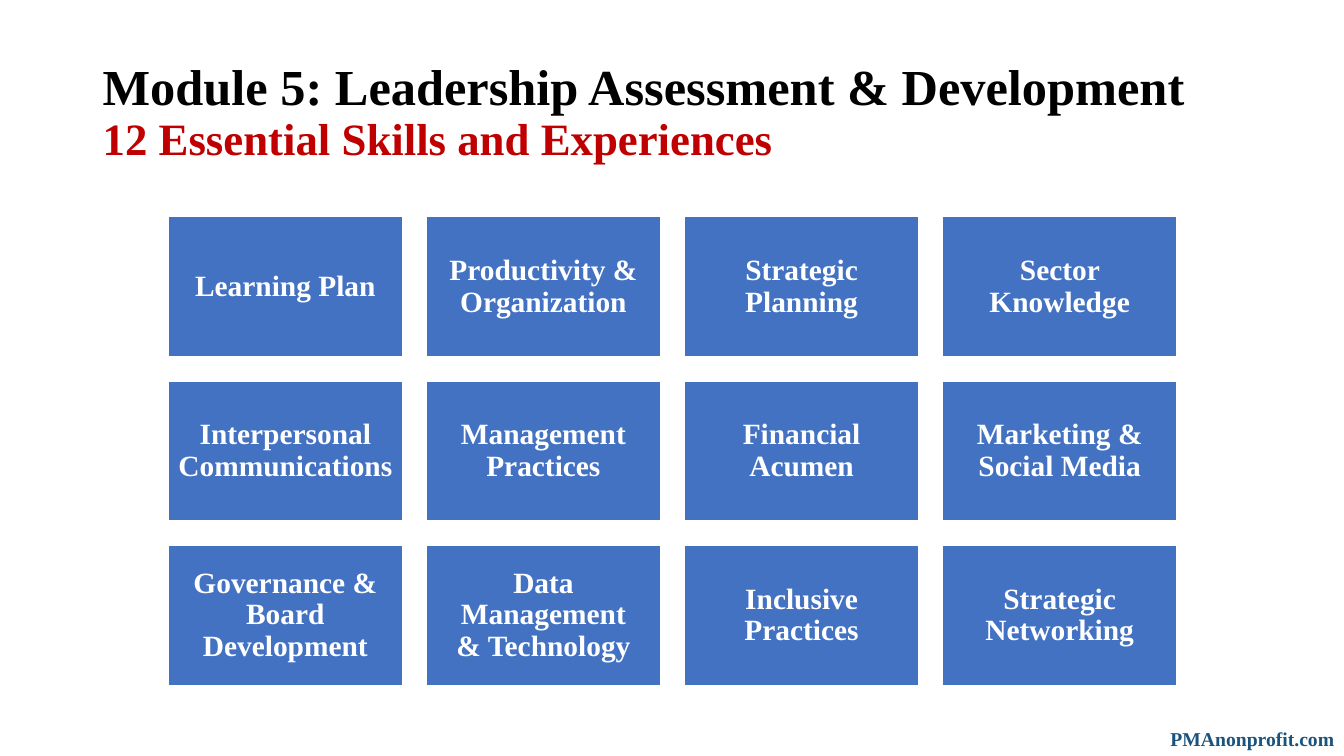
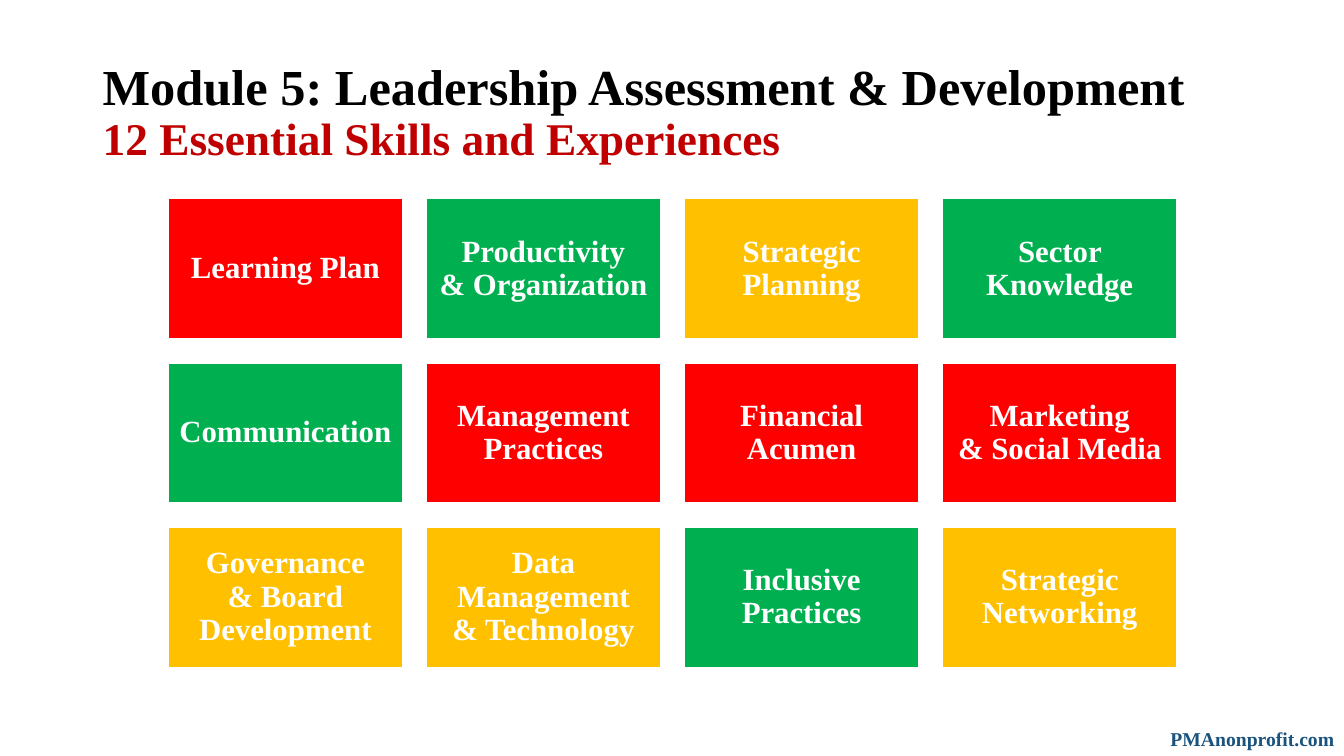
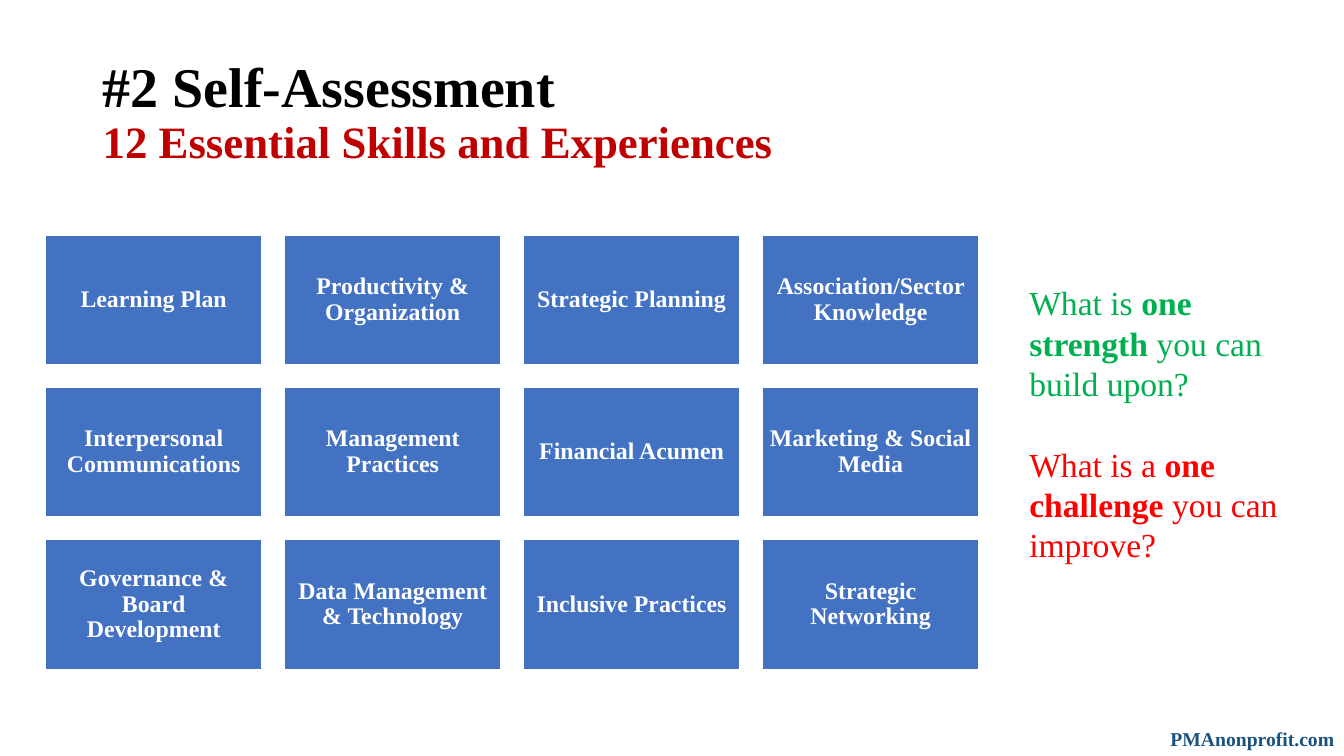
from dataclasses import dataclass, field
from typing import Any

from pptx import Presentation, slide as sld, util as u
from pptx.dml import color
from pptx.enum import shapes, text as t
from pptx.text import text as txt

Inches, Pt = u.Inches, u.Pt

COLORS = {
    "black": "000000", "white": "FFFFFF", "blue": "4372C3", "navy": "1A537E",
    "crimson": "C00000", "red": "FF0000", "green": "00B050", "amber": "FFC000",
}
FONT = "Times New Roman"
COLUMNS = 4
SUBTITLE = "12 Essential Skills and Experiences"
MODULE = "Module 5: Leadership Assessment & Development"
SKILLS = [
    "Learning Plan", "Productivity & Organization", "Strategic Planning", "Sector Knowledge",
    "Interpersonal Communications", "Management Practices", "Financial Acumen",
    "Marketing & Social Media", "Governance & Board Development",
    "Data Management\n& Technology", "Inclusive Practices", "Strategic Networking",
]
RATINGS = [
    "red", "green", "amber", "green",
    "green", "red", "red", "red",
    "amber", "amber", "green", "amber",
]


@dataclass(frozen=True)
class Run:
    text: str
    size: float
    color: str
    bold: bool = True


@dataclass(frozen=True)
class Grid:
    left: float
    top: float
    tile_width: float
    tile_height: float
    gap: float
    inset: float
    text_size: float


@dataclass(frozen=True)
class SkillSlide:
    heading: Run
    subtitle_size: float
    grid: Grid
    fills: list[str] = field(default_factory=lambda: ["blue"] * len(SKILLS))
    rewordings: dict[str, str] = field(default_factory=dict)
    questions: tuple[list[Run], ...] = ()


def question(opening: str, focus: str, ending: str, hue: str) -> list[Run]:
    return [Run(opening, 24, hue, False), Run(focus, 24, hue), Run(ending, 24, hue, False)]


SLIDES = [
    SkillSlide(Run(MODULE, 36, "black"), 32, Grid(1.67, 2.15, 2.32, 1.39, 0.24, 0.09, 21)),
    SkillSlide(
        Run(MODULE, 36, "black"), 32.4, Grid(1.67, 1.97, 2.32, 1.39, 0.24, 0.09, 22), RATINGS,
        {
            "Productivity & Organization": "Productivity\n& Organization",
            "Interpersonal Communications": "Communication",
            "Marketing & Social Media": "Marketing\n& Social Media",
            "Governance & Board Development": "Governance\n& Board Development",
        },
    ),
    SkillSlide(
        Run("#2 Self-Assessment", 40, "black"), 32, Grid(0.45, 2.33, 2.15, 1.29, 0.22, 0.07, 17),
        rewordings={"Sector Knowledge": "Association/Sector Knowledge"},
        questions=(
            question("What is ", "one strength ", "you can build upon?", "green"),
            question("What is a ", "one challenge ", "you can improve?", "red"),
        ),
    ),
]


def rgb(name: str) -> color.RGBColor:
    return color.RGBColor.from_string(COLORS[name])


def apply(target: Any, values: dict[str, Any]) -> None:
    """Set each named attribute of the target."""
    for name, value in values.items():
        setattr(target, name, value)


def write(paragraph: txt._Paragraph, runs: list[Run], **layout: Any) -> None:
    """Fill a paragraph with runs, turning newlines into line breaks."""
    apply(paragraph, layout)
    for run in runs:
        for number, line in enumerate(run.text.split("\n")):
            if number:
                paragraph.add_line_break()
            if line:
                piece = paragraph.add_run()
                piece.text = line
                apply(piece.font, {"name": FONT, "size": Pt(run.size), "bold": run.bold})
                piece.font.color.rgb = rgb(run.color)


def add_text_frame(slide: sld.Slide, left: float, top: float, width: float, height: float,
                   **layout: Any) -> txt.TextFrame:
    box = slide.shapes.add_textbox(Inches(left), Inches(top), Inches(width), Inches(height))
    apply(box.text_frame, {"word_wrap": True, **layout})
    return box.text_frame


def add_title(slide: sld.Slide, heading: Run, subtitle_size: float) -> None:
    frame = add_text_frame(slide, 0.92, 0.4, 11.5, 1.45, vertical_anchor=t.MSO_ANCHOR.MIDDLE)
    subtitle = Run("\n" + SUBTITLE, subtitle_size, "crimson")
    write(frame.paragraphs[0], [heading, subtitle], line_spacing=0.9)


def add_footer(slide: sld.Slide) -> None:
    frame = add_text_frame(slide, 11.51, 7.16, 1.82, 0.34, margin_right=0)
    write(frame.paragraphs[0], [Run("PMAnonprofit.com", 14, "navy")])


def add_skill(slide: sld.Slide, grid: Grid, position: int, skill: str, fill: str) -> None:
    row, column = divmod(position, COLUMNS)
    tile = slide.shapes.add_shape(
        shapes.MSO_SHAPE.RECTANGLE,
        Inches(grid.left + column * (grid.tile_width + grid.gap)),
        Inches(grid.top + row * (grid.tile_height + grid.gap)),
        Inches(grid.tile_width), Inches(grid.tile_height),
    )
    tile.shadow.inherit = False
    tile.fill.solid()
    tile.fill.fore_color.rgb = rgb(fill)
    tile.line.color.rgb = rgb("white")
    tile.line.width = Pt(1)
    frame = tile.text_frame
    margins = {f"margin_{side}": Inches(grid.inset) for side in ("left", "top", "right", "bottom")}
    apply(frame, {"word_wrap": True, "vertical_anchor": t.MSO_ANCHOR.MIDDLE, **margins})
    write(frame.paragraphs[0], [Run(skill, grid.text_size, "white")],
          alignment=t.PP_ALIGN.CENTER, line_spacing=0.9)


def add_questions(slide: sld.Slide, questions: tuple[list[Run], ...]) -> None:
    frame = add_text_frame(slide, 10.11, 2.75, 2.79, 2.93)
    first, *others = questions
    write(frame.paragraphs[0], first)
    for runs in others:
        write(frame.add_paragraph(), runs, space_before=Pt(29))


def main() -> None:
    deck = Presentation()
    apply(deck, {"slide_width": Inches(13.33), "slide_height": Inches(7.5)})
    for content in SLIDES:
        slide = deck.slides.add_slide(deck.slide_layouts[6])
        add_title(slide, content.heading, content.subtitle_size)
        for position, (skill, fill) in enumerate(zip(SKILLS, content.fills)):
            wording = content.rewordings.get(skill, skill)
            add_skill(slide, content.grid, position, wording, fill)
        if content.questions:
            add_questions(slide, content.questions)
        add_footer(slide)
    deck.save("out.pptx")


if __name__ == "__main__":
    main()
